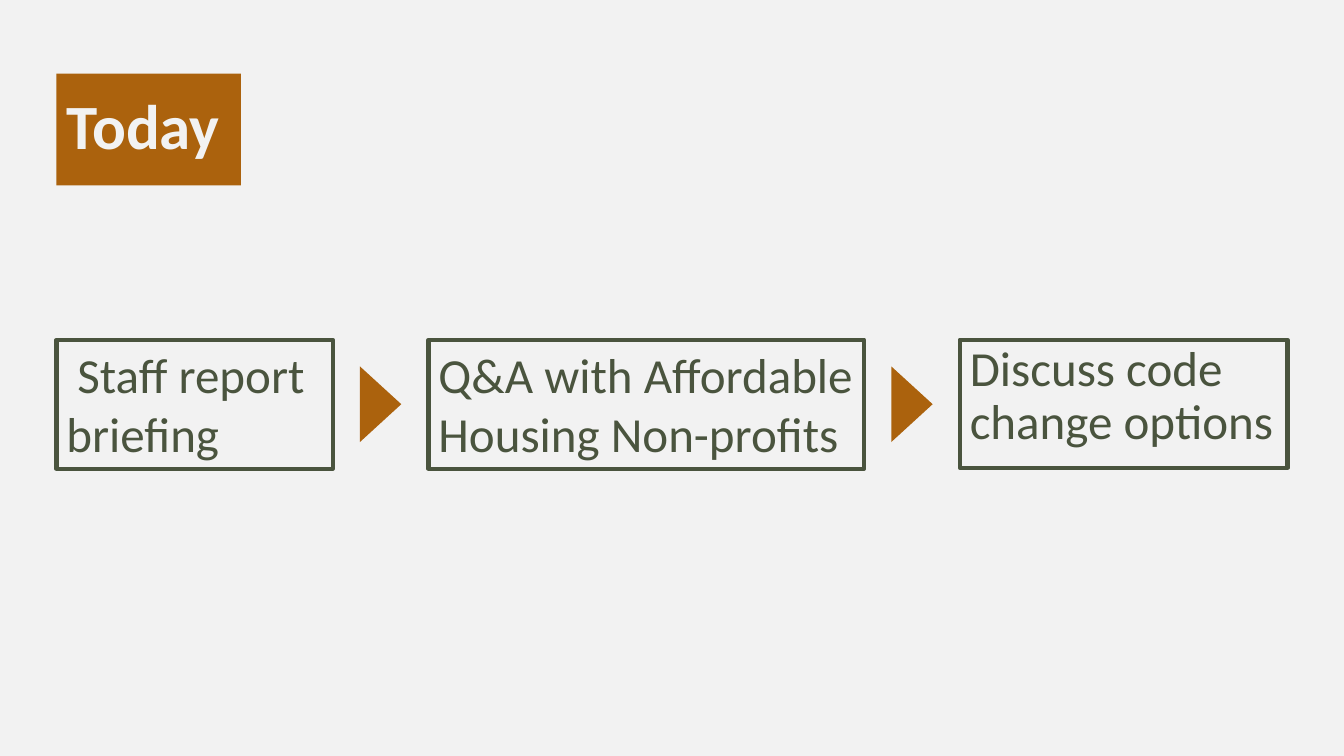
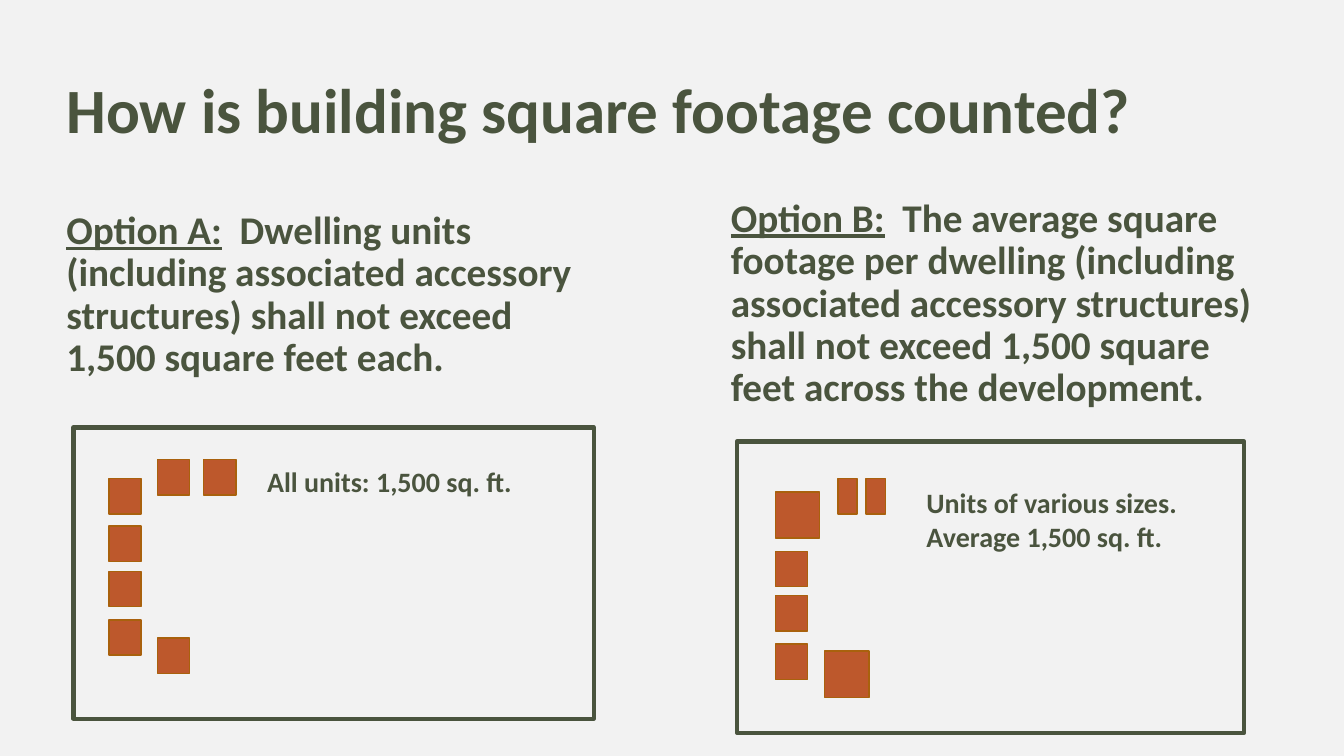
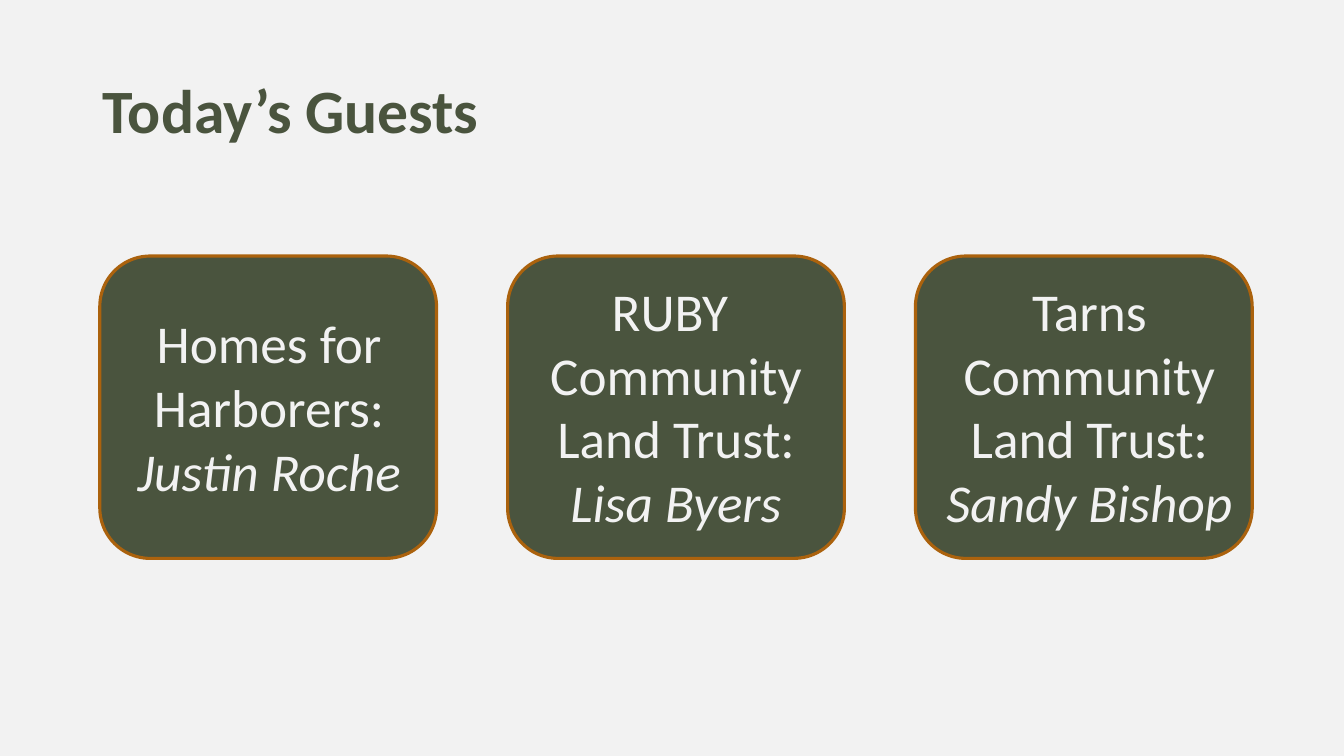
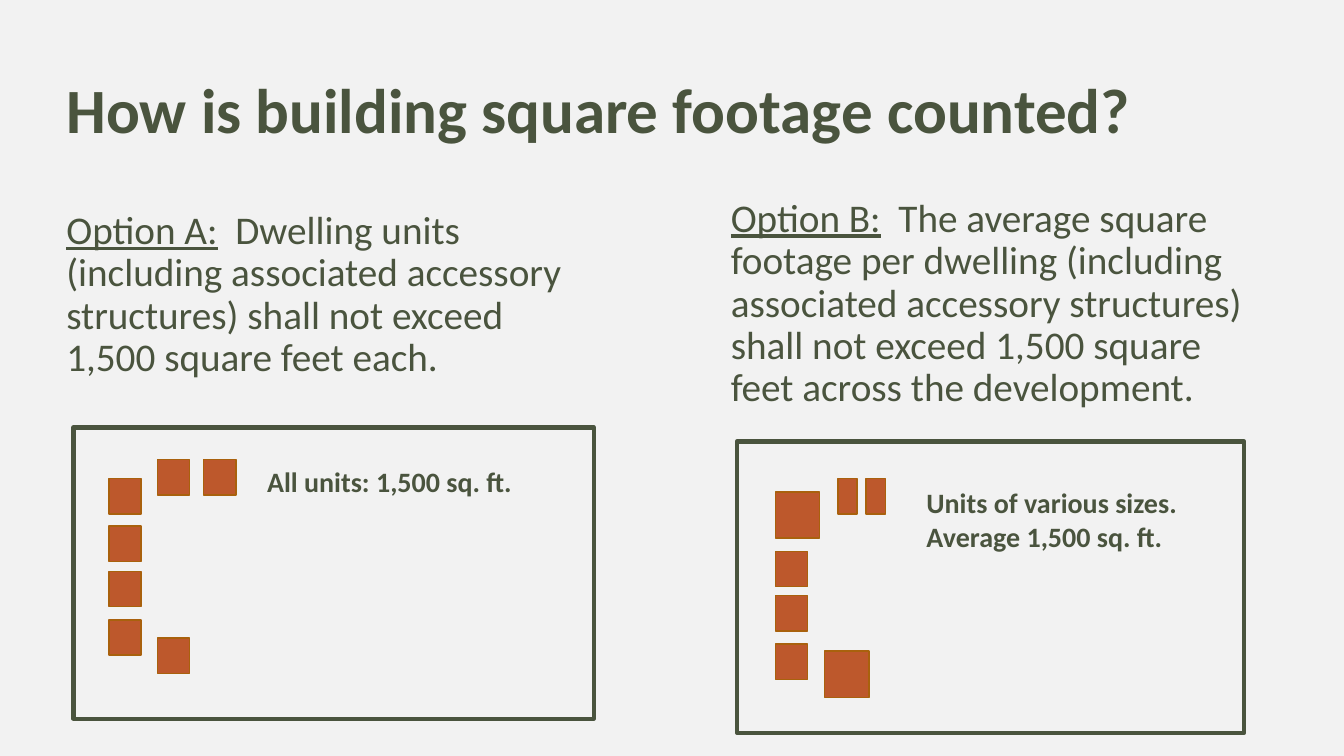
from dataclasses import dataclass
from typing import NamedTuple

from pptx import Presentation, util as u
from pptx.dml.color import RGBColor
from pptx.enum import shapes, text


@dataclass(frozen=True)
class Theme:
    font: str = "Calibri"
    paper: RGBColor = RGBColor(0xF2, 0xF2, 0xF2)
    green: RGBColor = RGBColor(0x4A, 0x54, 0x3E)
    amber: RGBColor = RGBColor(0xAB, 0x62, 0x0D)
    rust: RGBColor = RGBColor(0xBD, 0x58, 0x2C)
    unit_edge: RGBColor = RGBColor(0xA9, 0x61, 0x0D)
    title: float = 45
    guests_title: float = 44
    guest: float = 38
    step: float = 35
    option: float = 28
    caption: float = 20
    tight: float = 0.9
    frame_line: float = 3
    card_line: float = 2.25
    unit_line: float = 1


THEME = Theme()
RECT = shapes.MSO_SHAPE.RECTANGLE


class Box(NamedTuple):
    left: float
    top: float
    width: float
    height: float

    def lengths(self) -> list:
        return [u.Inches(value) for value in self]


class Unit(NamedTuple):
    """A dwelling on a site plan; the standard size unless stated."""
    left: float
    top: float
    width: float = 0.32
    height: float = 0.35


@dataclass(frozen=True)
class Step:
    label: str
    left: float
    width: float
    height: float = 1.28
    spacing: float | None = None
    before: float | None = None


@dataclass(frozen=True)
class Option:
    label: str
    rule: str
    rule_box: Box
    site: Box
    units: tuple
    caption: tuple
    caption_box: Box


@dataclass(frozen=True)
class Guest:
    organization: tuple
    person: str
    box: Box


STEPS = (
    Step(" Staff report briefing", 0.56, 2.74),
    Step("Q&A with Affordable Housing Non-profits", 4.25, 4.32),
    Step("Discuss code change options", 9.52, 3.25, 1.27, THEME.tight, 10),
)

OPTIONS = (
    Option(
        "Option A:",
        "  Dwelling units (including associated accessory structures) "
        "shall not exceed 1,500 square feet each.",
        Box(0.56, 2.04, 5.46, 3.42),
        Box(0.73, 4.24, 5.16, 2.89),
        (Unit(1.08, 4.75), Unit(1.56, 4.56), Unit(2.02, 4.56), Unit(1.08, 5.22),
         Unit(1.08, 5.67), Unit(1.08, 6.15), Unit(1.56, 6.33)),
        ("All units: 1,500 sq. ft.",),
        Box(2.55, 4.56, 2.95, 0.44),
    ),
    Option(
        "Option B:",
        "  The average square footage per dwelling (including associated accessory "
        "structures) shall not exceed 1,500 square feet across the development.",
        Box(7.15, 1.92, 5.46, 3.42),
        Box(7.31, 4.38, 5.03, 2.89),
        (Unit(7.69, 4.88, 0.44, 0.46), Unit(8.31, 4.75, 0.19), Unit(8.59, 4.75, 0.19),
         Unit(7.69, 5.47), Unit(7.69, 5.91), Unit(7.69, 6.39),
         Unit(8.18, 6.46, 0.44, 0.46)),
        ("Units of various sizes.", "Average 1,500 sq. ft."),
        Box(9.09, 4.77, 2.95, 0.77),
    ),
)

GUESTS = (
    Guest(("Homes for Harborers:",), "Justin Roche", Box(1.23, 3.03, 2.88, 2.02)),
    Guest(("RUBY ", "Community Land Trust:"), "Lisa Byers", Box(5.28, 2.71, 2.85, 2.66)),
    Guest(("Tarns", "Community Land Trust:"), "Sandy Bishop", Box(9.27, 2.71, 3.07, 2.66)),
)


# Shared drawing
def style(paragraph, size: float, color: RGBColor, bold: bool = False,
          italic: bool = False) -> None:
    font = paragraph.font
    font.name, font.size, font.color.rgb = THEME.font, u.Pt(size), color
    font.bold, font.italic = bold, italic


def add_titled_slide(prs, title: str, box: Box, size: float = THEME.title,
                     color: RGBColor = THEME.green, band: RGBColor | None = None):
    slide = prs.slides.add_slide(prs.slide_layouts[5])
    heading = slide.shapes.title
    heading.left, heading.top, heading.width, heading.height = box.lengths()
    if band is not None:
        heading.fill.solid()
        heading.fill.fore_color.rgb = band
    frame = heading.text_frame
    frame.text = title
    frame.auto_size = text.MSO_AUTO_SIZE.NONE
    frame.vertical_anchor = text.MSO_ANCHOR.MIDDLE
    paragraph = frame.paragraphs[0]
    paragraph.alignment = text.PP_ALIGN.LEFT
    paragraph.line_spacing = THEME.tight
    style(paragraph, size, color, bold=True)
    return slide


def add_figure(slide, kind, box, fill: RGBColor | None = None,
               edge: RGBColor | None = None, weight: float = 0):
    figure = slide.shapes.add_shape(kind, *[u.Inches(value) for value in box])
    figure.shadow.inherit = False
    if fill is None:
        figure.fill.background()
    else:
        figure.fill.solid()
        figure.fill.fore_color.rgb = fill
    if edge is None:
        figure.line.fill.background()
    else:
        figure.line.color.rgb = edge
        figure.line.width = u.Pt(weight)
    return figure


def add_text(slide, box: Box, lines: tuple):
    frame = slide.shapes.add_textbox(*box.lengths()).text_frame
    frame.word_wrap = True
    frame.text = "\n".join(lines)
    return frame


# Agenda
def build_agenda(prs) -> None:
    slide = add_titled_slide(prs, "Today", Box(0.56, 0.73, 1.83, 1.11),
                             color=THEME.paper, band=THEME.amber)
    top, arrow_width, arrow_height = 3.37, 0.75, 0.41
    for step in STEPS:
        frame = add_figure(slide, RECT, Box(step.left, top, step.width, step.height),
                           edge=THEME.green, weight=THEME.frame_line).text_frame
        frame.word_wrap = True
        frame.vertical_anchor = text.MSO_ANCHOR.TOP
        frame.text = step.label
        paragraph = frame.paragraphs[0]
        paragraph.alignment = text.PP_ALIGN.LEFT
        if step.spacing is not None:
            paragraph.line_spacing = step.spacing
            paragraph.space_before = u.Pt(step.before)
        style(paragraph, THEME.step, THEME.green)

    # Arrows sit midway between neighbouring steps
    for step, following in zip(STEPS, STEPS[1:]):
        center = (step.left + step.width + following.left) / 2
        middle = top + step.height / 2
        arrow = add_figure(slide, shapes.MSO_SHAPE.ISOSCELES_TRIANGLE,
                           Box(center - arrow_width / 2, middle - arrow_height / 2,
                               arrow_width, arrow_height), fill=THEME.amber)
        arrow.rotation = 90


# Square footage options
def add_option(slide, option: Option, bold: bool) -> None:
    rule = add_text(slide, option.rule_box, ("",)).paragraphs[0]
    rule.line_spacing = THEME.tight
    rule.space_before = u.Pt(10)
    style(rule, THEME.option, THEME.green, bold=bold)
    label = rule.add_run()
    label.text = option.label
    label.font.underline = True
    rule.add_run().text = option.rule

    add_figure(slide, RECT, option.site, edge=THEME.green, weight=THEME.frame_line)
    for unit in option.units:
        add_figure(slide, RECT, unit, THEME.rust, THEME.unit_edge, THEME.unit_line)
    for paragraph in add_text(slide, option.caption_box, option.caption).paragraphs:
        style(paragraph, THEME.caption, THEME.green, bold=True)


def build_footage(prs, bold_rules: bool) -> None:
    slide = add_titled_slide(prs, "How is building square footage counted?",
                             Box(0.56, 0.57, 11.62, 1.11))
    for option in OPTIONS:
        add_option(slide, option, bold_rules)


# Guests
def build_guests(prs) -> None:
    slide = add_titled_slide(prs, "Today’s Guests", Box(0.92, 0.4, 11.5, 1.45),
                             THEME.guests_title)
    first_left, pitch = 0.99, 4.045
    for index, guest in enumerate(GUESTS):
        add_figure(slide, shapes.MSO_SHAPE.ROUNDED_RECTANGLE,
                   Box(first_left + index * pitch, 2.54, 3.34, 3),
                   THEME.green, THEME.amber, THEME.card_line)
        lines = (*guest.organization, guest.person)
        for line, paragraph in zip(lines, add_text(slide, guest.box, lines).paragraphs):
            paragraph.alignment = text.PP_ALIGN.CENTER
            style(paragraph, THEME.guest, THEME.paper, italic=line == guest.person)


def main() -> None:
    prs = Presentation()
    prs.slide_width, prs.slide_height = u.Inches(13.33), u.Inches(7.5)
    backdrop = prs.slide_master.background.fill
    backdrop.solid()
    backdrop.fore_color.rgb = THEME.paper

    build_agenda(prs)
    build_footage(prs, bold_rules=True)
    build_guests(prs)
    build_footage(prs, bold_rules=False)
    prs.save("out.pptx")


if __name__ == "__main__":
    main()
